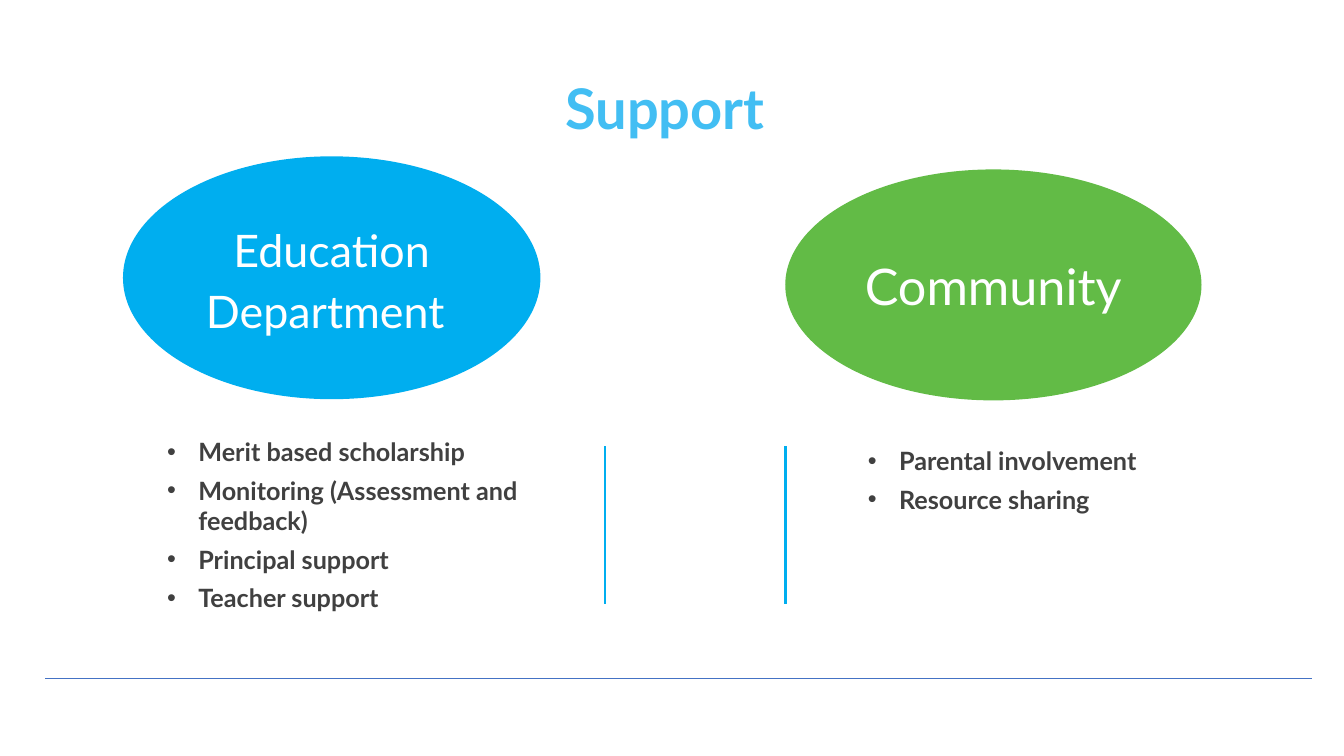
from dataclasses import dataclass

from lxml import etree
from pptx import Presentation
from pptx import util as u
from pptx.dml.color import RGBColor
from pptx.enum import shapes, text
from pptx.oxml.ns import qn


@dataclass(frozen=True)
class Theme:
    font: str = "Lato"
    heading: str = "42BEF3"
    blue: str = "00AEEF"
    green: str = "62BB46"
    body: str = "404040"
    rule: str = "4472C4"
    white: str = "FFFFFF"
    title_size: int = 40
    large_size: int = 36
    label_size: int = 32
    list_size: int = 18


class SlideBuilder:
    def __init__(self, slide, theme):
        self.slide = slide
        self.theme = theme

    def apply(self, target, formats):
        for name, value in formats.items():
            setattr(target, name, value)

    def add_words(self, paragraph, words, size, color, bold=False):
        run = paragraph.add_run()
        run.text = words
        self.apply(run.font, {"name": self.theme.font, "size": u.Pt(size), "bold": bold})
        run.font.color.rgb = RGBColor.from_string(color)

    def text_frame(self, box):
        frame = self.slide.shapes.add_textbox(*map(u.Cm, box)).text_frame
        frame.word_wrap = True
        return frame

    def title(self, words, box):
        heading = self.text_frame(box).paragraphs[0]
        self.apply(heading, {"alignment": text.PP_ALIGN.CENTER, "line_spacing": 0.9,
                             "space_before": u.Pt(6)})
        self.add_words(heading, words, self.theme.title_size, self.theme.heading, True)

    def bullets(self, items, box):
        frame = self.text_frame(box)
        frame.auto_size = text.MSO_AUTO_SIZE.SHAPE_TO_FIT_TEXT
        for index, item in enumerate(items):
            entry = frame.add_paragraph() if index else frame.paragraphs[0]
            entry.space_after = u.Pt(6)
            self.add_words(entry, item, self.theme.list_size, self.theme.body, True)
            # Hanging bullet
            properties = entry._p.get_or_add_pPr()
            indent = u.Cm(0.79)
            properties.set("marL", str(indent))
            properties.set("indent", str(-indent))
            etree.SubElement(properties, qn("a:buFont"), typeface="Arial")
            etree.SubElement(properties, qn("a:buChar"), char="•")

    def ellipse(self, parts, box, color):
        oval = self.slide.shapes.add_shape(shapes.MSO_SHAPE.OVAL, *map(u.Cm, box))
        oval.shadow.inherit = False
        oval.fill.solid()
        oval.fill.fore_color.rgb = RGBColor.from_string(color)
        oval.line.fill.background()
        self.apply(oval.text_frame, {"word_wrap": True,
                                     "vertical_anchor": text.MSO_ANCHOR.MIDDLE})
        label = oval.text_frame.paragraphs[0]
        label.alignment = text.PP_ALIGN.CENTER
        for words, size in parts:
            self.add_words(label, words, size, self.theme.white)

    def line(self, start, end, color, width):
        rule = self.slide.shapes.add_connector(
            shapes.MSO_CONNECTOR.STRAIGHT, *map(u.Cm, start + end))
        rule.line.color.rgb = RGBColor.from_string(color)
        rule.line.width = u.Pt(width)
        etree.SubElement(rule._element.spPr, qn("a:effectLst"))


def main():
    deck = Presentation()
    deck.slide_width, deck.slide_height = u.Cm(33.87), u.Cm(19.05)
    theme = Theme()
    support = SlideBuilder(deck.slides.add_slide(deck.slide_layouts[6]), theme)

    # Title and footer rule
    support.title("Support ", (4.88, 1.93, 24.1, 1.22))
    support.line((1.14, 17.09), (33.07, 17.09), theme.rule, 0.25)

    # Education department
    support.bullets(["Merit based scholarship", "Monitoring (Assessment and feedback)",
                     "Principal support", "Teacher support"], (3.96, 10.87, 10.21, 4.75))
    support.ellipse([("Education", theme.label_size), (" ", theme.large_size),
                     ("Department", theme.label_size), (" ", theme.large_size)],
                    (3.1, 3.94, 10.52, 6.12), theme.blue)

    # Community
    support.ellipse([("Community", theme.large_size)],
                    (19.79, 4.27, 10.49, 5.82), theme.green)
    support.bullets(["Parental involvement ", "Resource sharing "],
                    (21.62, 11.1, 9.78, 2.01))

    # Dividers between the two lists
    for divider_x in (15.24, 19.79):
        support.line((divider_x, 11.25), (divider_x, 15.21), theme.blue, 1.75)

    deck.save("out.pptx")


if __name__ == "__main__":
    main()
